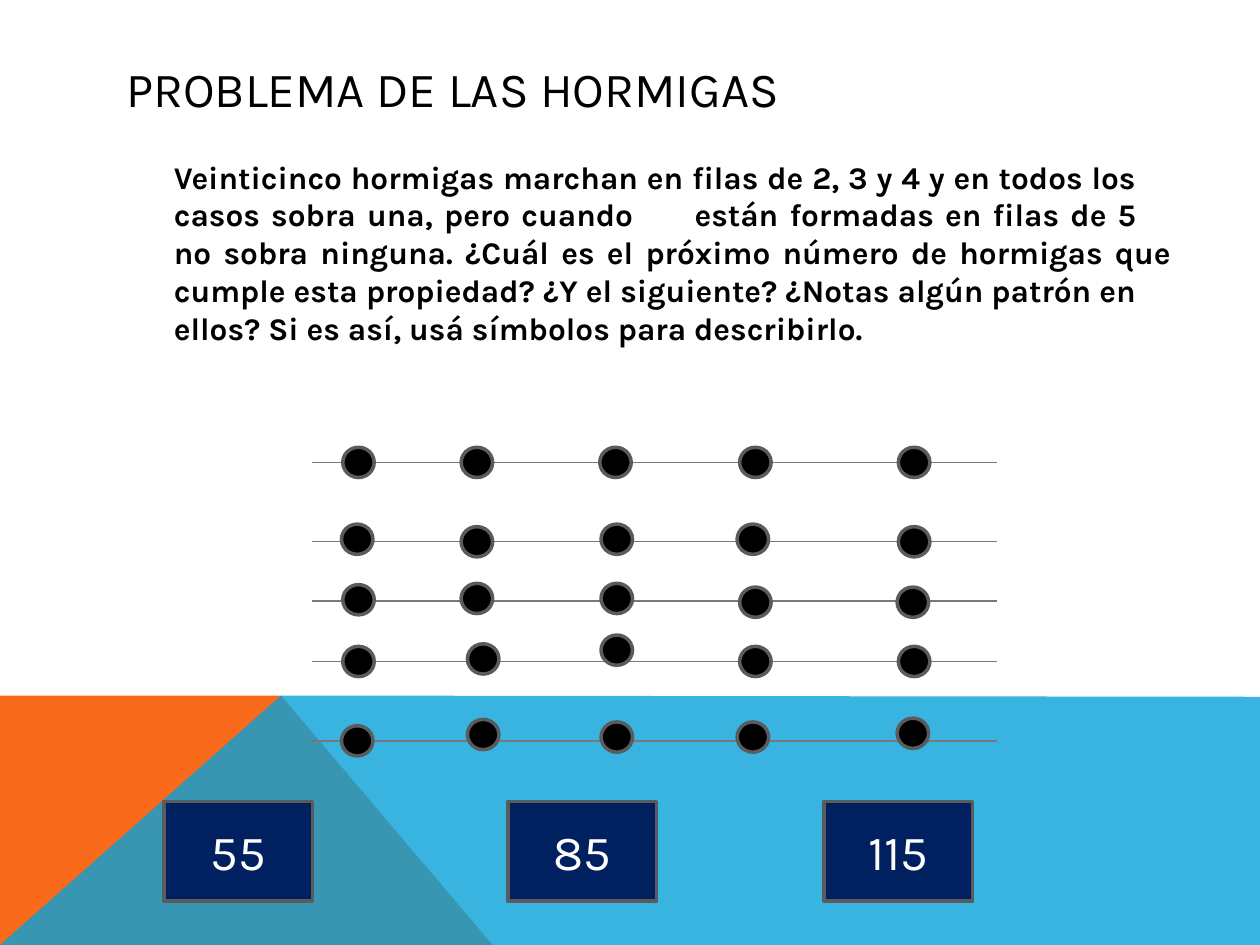
from dataclasses import dataclass
from typing import Any, NamedTuple

from lxml.etree import SubElement
from pptx import Presentation
from pptx.dml.color import RGBColor as RGB
from pptx.enum.shapes import MSO_CONNECTOR as CONN, MSO_SHAPE as SHAPE
from pptx.enum.text import MSO_ANCHOR as ANCHOR, MSO_AUTO_SIZE as AUTO, PP_ALIGN as ALIGN
from pptx.oxml.ns import qn
from pptx.util import Inches, Pt


@dataclass(frozen=True)
class Theme:
    font: str = "Karla"
    text: str = "000000"
    light: str = "FFFFFF"
    orange: str = "F96A1B"
    blue: str = "08A1D9"
    navy: str = "002060"
    track: str = "76787B"
    edge: str = "5A5B5D"
    large: float = 28
    body: float = 18
    edge_width: float = 2
    track_width: float = 0.75


class Box(NamedTuple):
    col: float
    row: float
    cols: float
    rows: float


class Nudge(NamedTuple):
    col: float = 0
    row: float = 0


class AntRow(NamedTuple):
    row: float
    nudges: dict[int, Nudge]


class Answer(NamedTuple):
    col: float
    text: str


class Band(NamedTuple):
    points: list[tuple[float, float]]
    color: str
    opacity: int


THEME = Theme()
WIDTH, HEIGHT = Inches(10), Inches(7.5)
UNIT = WIDTH // 100
TITLE_BOX = Box(9, 4, 82.2, 6)
BODY_BOX = Box(9, 12, 82.2, 20.7)
TRACK_START, TRACK_END = 24.8, 79.1
DOT = Box(0, -1.2, 2.5, 2.4)
DOT_COLS = (27.2, 36.6, 47.7, 58.7, 71.3)
ANSWER_BOX = Box(0, 63.6, 11.8, 7.9)

TITLE = "PROBLEMA DE LAS HORMIGAS"
BODY = (
    "Veinticinco hormigas marchan en filas de 2, 3 y 4 y en todos los casos "
    "sobra una, pero cuando \testán formadas en filas de 5 no sobra ninguna. "
    "¿Cuál es el próximo número de hormigas que \tcumple esta propiedad? "
    "¿Y el siguiente? ¿Notas algún patrón en ellos? "
    "Si es así, usá símbolos para describirlo."
)
BANDS = [
    Band([(0, 75), (0, 55.2), (22.3, 55.2), (39.1, 75)], THEME.orange, 100),
    Band([(0, 75), (22.3, 55.2), (100, 55.3), (100, 75)], THEME.blue, 80),
]
ANT_ROWS = [
    AntRow(36.7, {2: Nudge(-0.1)}),
    AntRow(43, {0: Nudge(-0.1, -0.2), 2: Nudge(0, -0.2), 3: Nudge(-0.2, -0.2)}),
    AntRow(47.7, {0: Nudge(0, -0.1), 1: Nudge(0, -0.2), 2: Nudge(0, -0.2),
                  3: Nudge(0, 0.1), 4: Nudge(-0.1, 0.1)}),
    AntRow(52.5, {1: Nudge(0.5, -0.2), 2: Nudge(0, -0.9)}),
    AntRow(58.8, {0: Nudge(-0.1), 1: Nudge(0.5, -0.5), 2: Nudge(0, -0.3),
                  3: Nudge(-0.2, -0.3), 4: Nudge(-0.1, -0.6)}),
]
ANSWERS = [Answer(13, "55"), Answer(40.3, "85"), Answer(65.4, "115")]


def u(units: float) -> int:
    return round(units * UNIT)


def assign(target: Any, values: dict[str, Any]) -> None:
    for name, value in values.items():
        setattr(target, name, value)


def place(sp: Any, box: Box) -> None:
    assign(sp, dict(zip(("left", "top", "width", "height"), map(u, box))))


def write(sp: Any, text: str, size: float, color: str, align: ALIGN,
          anchor: ANCHOR, bold: bool = False) -> Any:
    tf = sp.text_frame
    assign(tf, {"word_wrap": True, "auto_size": AUTO.NONE, "vertical_anchor": anchor})
    p = tf.paragraphs[0]
    p.alignment = align
    r = p.add_run()
    r.text = text
    assign(r.font, {"name": THEME.font, "size": Pt(size), "bold": bold})
    r.font.color.rgb = RGB.from_string(color)
    return p


def paint(sp: Any, fill: str) -> None:
    sp.shadow.inherit = False
    sp.fill.solid()
    sp.fill.fore_color.rgb = RGB.from_string(fill)


def outline(sp: Any, color: str, width: float) -> None:
    sp.line.color.rgb = RGB.from_string(color)
    sp.line.width = Pt(width)


def add_band(s: Any, band: Band) -> None:
    points = [(u(col), u(row)) for col, row in band.points]
    builder = s.shapes.build_freeform(*points[0])
    builder.add_line_segments(points[1:], close=True)
    sp = builder.convert_to_shape()
    paint(sp, band.color)
    sp.line.fill.background()
    if band.opacity < 100:
        color = sp.fill._xPr.find(qn("a:solidFill"))[0]
        SubElement(color, qn("a:alpha"), val=str(band.opacity * 1000))


def add_block(s: Any, kind: SHAPE, box: Box, fill: str) -> Any:
    sp = s.shapes.add_shape(kind, *map(u, box))
    paint(sp, fill)
    outline(sp, THEME.edge, THEME.edge_width)
    return sp


def add_track(s: Any, row: float) -> None:
    line = s.shapes.add_connector(CONN.STRAIGHT, u(TRACK_START), u(row), u(TRACK_END), u(row))
    outline(line, THEME.track, THEME.track_width)
    SubElement(line._element.spPr, qn("a:effectLst"))


def add_ants(s: Any, ants: AntRow) -> None:
    for index, col in enumerate(DOT_COLS):
        nudge = ants.nudges.get(index, Nudge())
        box = DOT._replace(col=col + nudge.col, row=ants.row + DOT.row + nudge.row)
        add_block(s, SHAPE.FLOWCHART_CONNECTOR, box, THEME.text)


def add_answer(s: Any, answer: Answer) -> None:
    sp = add_block(s, SHAPE.RECTANGLE, ANSWER_BOX._replace(col=answer.col), THEME.navy)
    write(sp, answer.text, THEME.large, THEME.light, ALIGN.CENTER, ANCHOR.MIDDLE)


def main() -> None:
    prs = Presentation()
    assign(prs, {"slide_width": WIDTH, "slide_height": HEIGHT})
    s = prs.slides.add_slide(prs.slide_layouts[1])
    title, body = s.placeholders
    place(title, TITLE_BOX)
    write(title, TITLE, THEME.large, THEME.text, ALIGN.LEFT, ANCHOR.MIDDLE)
    place(body, BODY_BOX)
    p = write(body, BODY, THEME.body, THEME.text, ALIGN.JUSTIFY, ANCHOR.TOP, bold=True)
    p.space_before = Pt(8)
    pPr = p._p.get_or_add_pPr()
    pPr.set("marL", str(u(3.8)))
    pPr.set("indent", "0")
    SubElement(pPr, qn("a:buNone"))
    for band in BANDS:
        add_band(s, band)
    for ants in ANT_ROWS:
        add_track(s, ants.row)
    for ants in ANT_ROWS:
        add_ants(s, ants)
    for answer in ANSWERS:
        add_answer(s, answer)
    prs.save("out.pptx")


if __name__ == "__main__":
    main()
